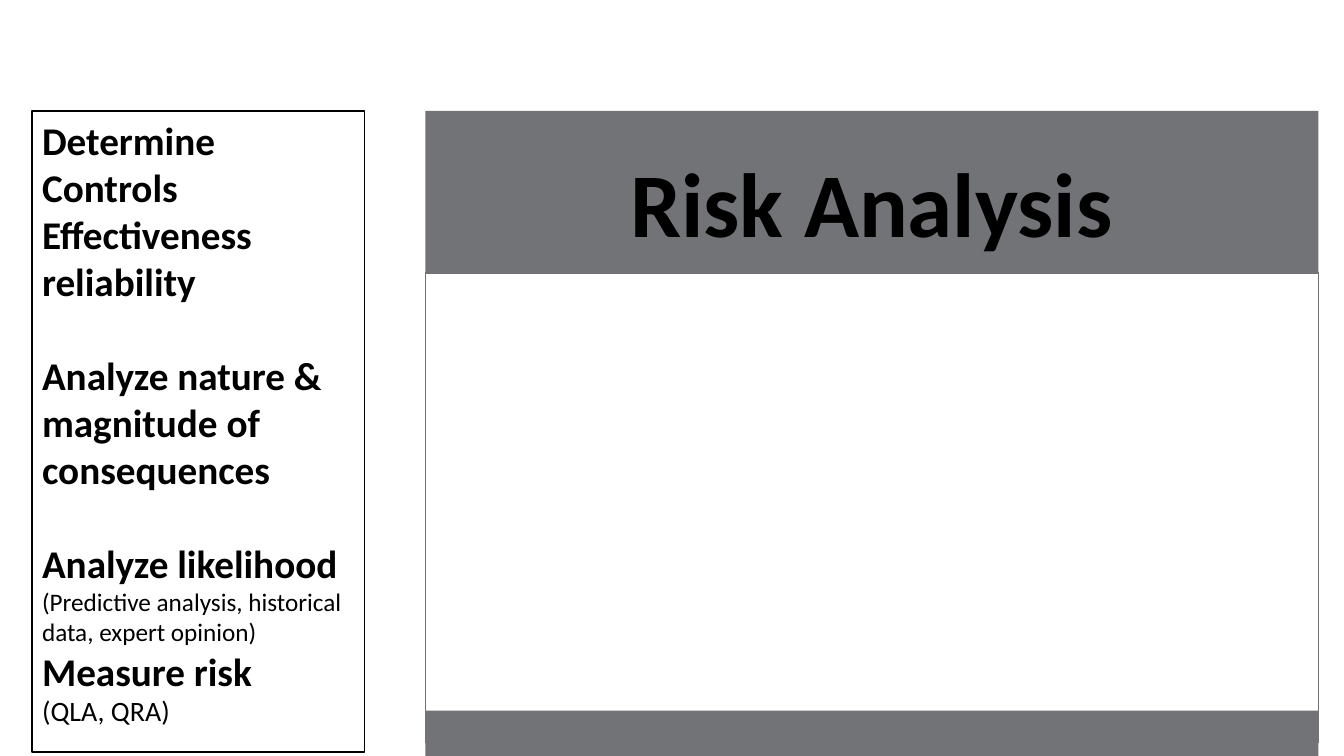
from pptx import Presentation
from pptx.dml.color import RGBColor
from pptx.enum.shapes import MSO_SHAPE as Shape
from pptx.enum.text import MSO_ANCHOR as Anchor, MSO_AUTO_SIZE as AutoSize, PP_ALIGN as Align
from pptx.util import Pt

GREY = RGBColor(0x72, 0x73, 0x77)
WHITE = RGBColor(0xFF, 0xFF, 0xFF)
BLACK = RGBColor(0x00, 0x00, 0x00)
FONT = "Calibri"

PANEL_LEFT, PANEL_WIDTH, TOP = 303.8, 637.9, 79.2
STEP_GAP = 33.6

STEPS = [
    ("Determine Controls", 28, True, 0),
    ("Effectiveness reliability", 28, True, 0),
    ("Analyze nature & magnitude of consequences", 28, True, STEP_GAP),
    ("Analyze likelihood", 28, True, STEP_GAP),
    ("(Predictive analysis, historical data, expert opinion)", 18, False, 0),
    ("Measure risk", 28, True, 0),
    ("(QLA, QRA)", 20, False, 0),
]


def add_box(slide, left, top, width, height, fill, outline=None):
    box = slide.shapes.add_shape(Shape.RECTANGLE, Pt(left), Pt(top), Pt(width), Pt(height))
    box.shadow.inherit = False
    box.fill.solid()
    box.fill.fore_color.rgb = fill
    if outline is None:
        box.line.fill.background()
    else:
        box.line.color.rgb = outline
        box.line.width = Pt(1)
    return box


def write(paragraph, text, size, bold, align):
    paragraph.text = text
    paragraph.alignment = align
    font = paragraph.runs[0].font
    font.name, font.size, font.bold = FONT, Pt(size), bold
    font.color.rgb = BLACK


def set_title(slide, text):
    title = slide.shapes.title
    title.left, title.top = Pt(PANEL_LEFT), Pt(TOP)
    title.width, title.height = Pt(PANEL_WIDTH), Pt(138.2)
    title.fill.solid()
    title.fill.fore_color.rgb = GREY
    frame = title.text_frame
    frame.auto_size = AutoSize.NONE
    frame.word_wrap = True
    frame.vertical_anchor = Anchor.MIDDLE
    frame.margin_left = frame.margin_right = Pt(19.4)
    frame.margin_top = frame.margin_bottom = Pt(19.4)
    heading = frame.paragraphs[0]
    write(heading, text, 65, True, Align.CENTER)
    heading.line_spacing = 0.9


def add_steps(slide):
    frame = add_box(slide, 23, TOP, 237.6, 457.9, WHITE, BLACK).text_frame
    frame.word_wrap = True
    frame.vertical_anchor = Anchor.TOP
    for index, (text, size, bold, gap) in enumerate(STEPS):
        step = frame.add_paragraph() if index else frame.paragraphs[0]
        write(step, text, size, bold, Align.LEFT)
        step.space_before = Pt(gap)


def main():
    deck = Presentation()
    deck.slide_width, deck.slide_height = Pt(960), Pt(540)
    slide = deck.slides.add_slide(deck.slide_layouts.get_by_name("Title Only"))
    set_title(slide, "Risk Analysis")
    add_box(slide, PANEL_LEFT, 195.1, PANEL_WIDTH, 335.5, WHITE, GREY)
    add_box(slide, PANEL_LEFT, 507.6, PANEL_WIDTH, 32.4, GREY)
    add_steps(slide)
    deck.save("out.pptx")


if __name__ == "__main__":
    main()
